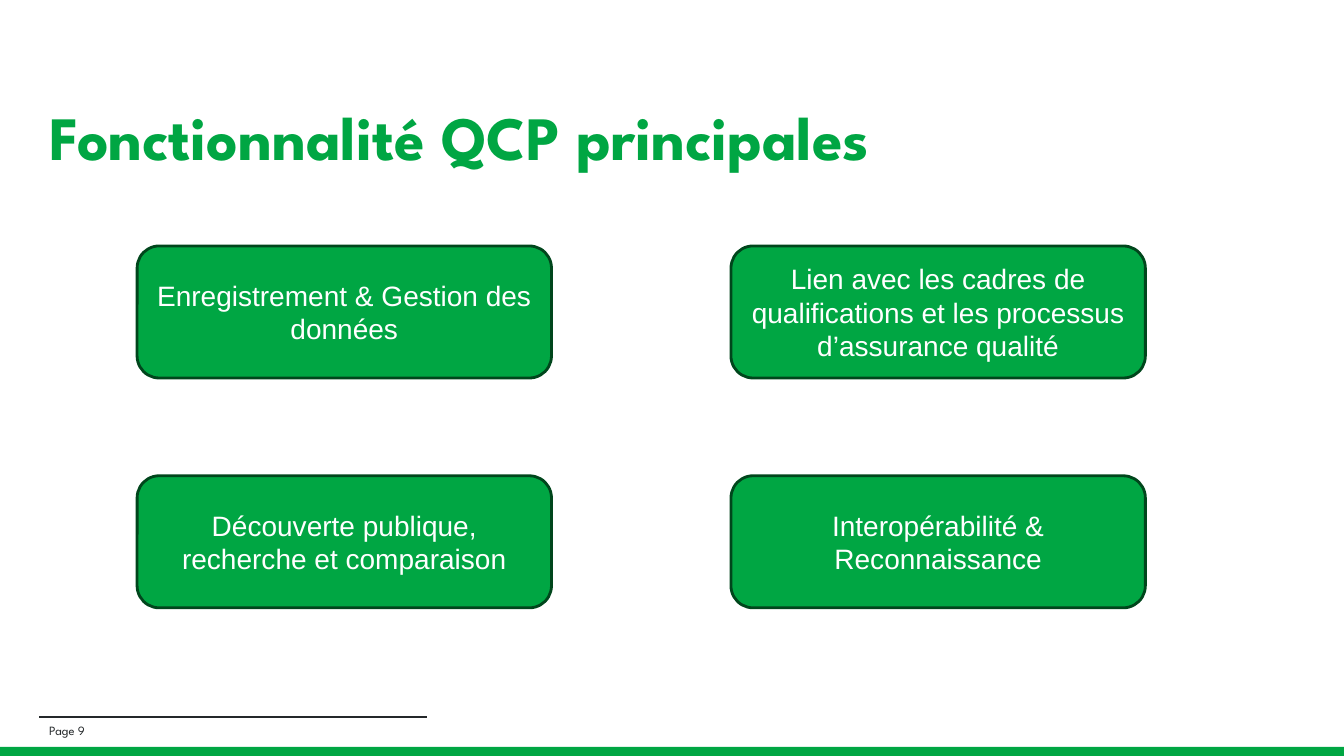
from lxml import etree
from pptx import Presentation
from pptx.dml.color import RGBColor
from pptx.enum.shapes import MSO_CONNECTOR, MSO_SHAPE
from pptx.enum.text import MSO_ANCHOR as ANCHOR, PP_ALIGN as ALIGN
from pptx.oxml.ns import qn
from pptx.util import Inches, Pt

GREEN, DARK_GREEN, INK, WHITE = "00A643", "00461C", "24282A", "FFFFFF"
W, H = 13.33, 7.5
MARGIN = 0.39
FEATURES = [
    "Enregistrement & Gestion des données",
    "Lien avec les cadres de qualifications et les processus d’assurance qualité",
    "Découverte publique, recherche et comparaison",
    "Interopérabilité & Reconnaissance",
]


def rgb(value):
    return RGBColor.from_string(value)


def write(sp, text, size, font, color, bold=False, align=ALIGN.LEFT):
    tf = sp.text_frame
    tf.word_wrap = True
    tf.vertical_anchor = ANCHOR.MIDDLE
    p = tf.paragraphs[0]
    p.text = text
    p.alignment = align
    p.font.size, p.font.name, p.font.bold = Pt(size), font, bold
    p.font.color.rgb = rgb(color)
    return p


def add_block(s, kind, box, line=None):
    sp = s.shapes.add_shape(kind, *map(Inches, box))
    sp.shadow.inherit = False
    sp.fill.solid()
    sp.fill.fore_color.rgb = rgb(GREEN)
    if line:
        sp.line.color.rgb = rgb(line)
        sp.line.width = Pt(2)
    else:
        sp.line.fill.background()
    return sp


def add_title(s, box, text):
    tb = s.shapes.add_textbox(*map(Inches, box))
    write(tb, text, 44, "League Spartan", GREEN, bold=True).line_spacing = 0.9


def add_features(s, box, features, cols=2):
    # Cards touch the edges of the box, with equal gaps between them
    left, top, width, height = box
    card_w, card_h = 4.11, 1.31
    rows = len(features) // cols
    step_x = (width - card_w) / (cols - 1)
    step_y = (height - card_h) / (rows - 1)
    for i, text in enumerate(features):
        row, col = divmod(i, cols)
        card = (left + col * step_x, top + row * step_y, card_w, card_h)
        sp = add_block(s, MSO_SHAPE.ROUNDED_RECTANGLE, card, DARK_GREEN)
        write(sp, text, 20, "Arial", WHITE, align=ALIGN.CENTER)


def add_footer(s, box, page):
    left, top, width, height = box
    # Green band along the bottom edge
    add_block(s, MSO_SHAPE.RECTANGLE, (-0.03, top + 0.3, W + 0.07, 0.13))
    # Rule above the page number
    x1, x2, y = Inches(left), Inches(left + 3.85), Inches(top)
    rule = s.shapes.add_connector(MSO_CONNECTOR.STRAIGHT, x1, y, x2, y)
    rule.line.color.rgb = rgb(INK)
    rule.line.width = Pt(1.5)
    etree.SubElement(rule._element.spPr, qn("a:effectLst"))
    # Page number
    tb = s.shapes.add_textbox(*map(Inches, (left, top + 0.04, width, 0.19)))
    write(tb, f"Page {page}", 9, "League Spartan", INK)


def main():
    prs = Presentation()
    prs.slide_width, prs.slide_height = Inches(W), Inches(H)
    s = prs.slides.add_slide(prs.slide_layouts[6])
    add_footer(s, (MARGIN, 7.11, 4.06, H - 7.11), 9)
    add_title(s, (MARGIN, 0.67, 12.54, 1.45), "Fonctionnalité QCP principales")
    add_features(s, (1.36, 2.44, 10, 3.59), FEATURES)
    prs.save("out.pptx")


if __name__ == "__main__":
    main()
